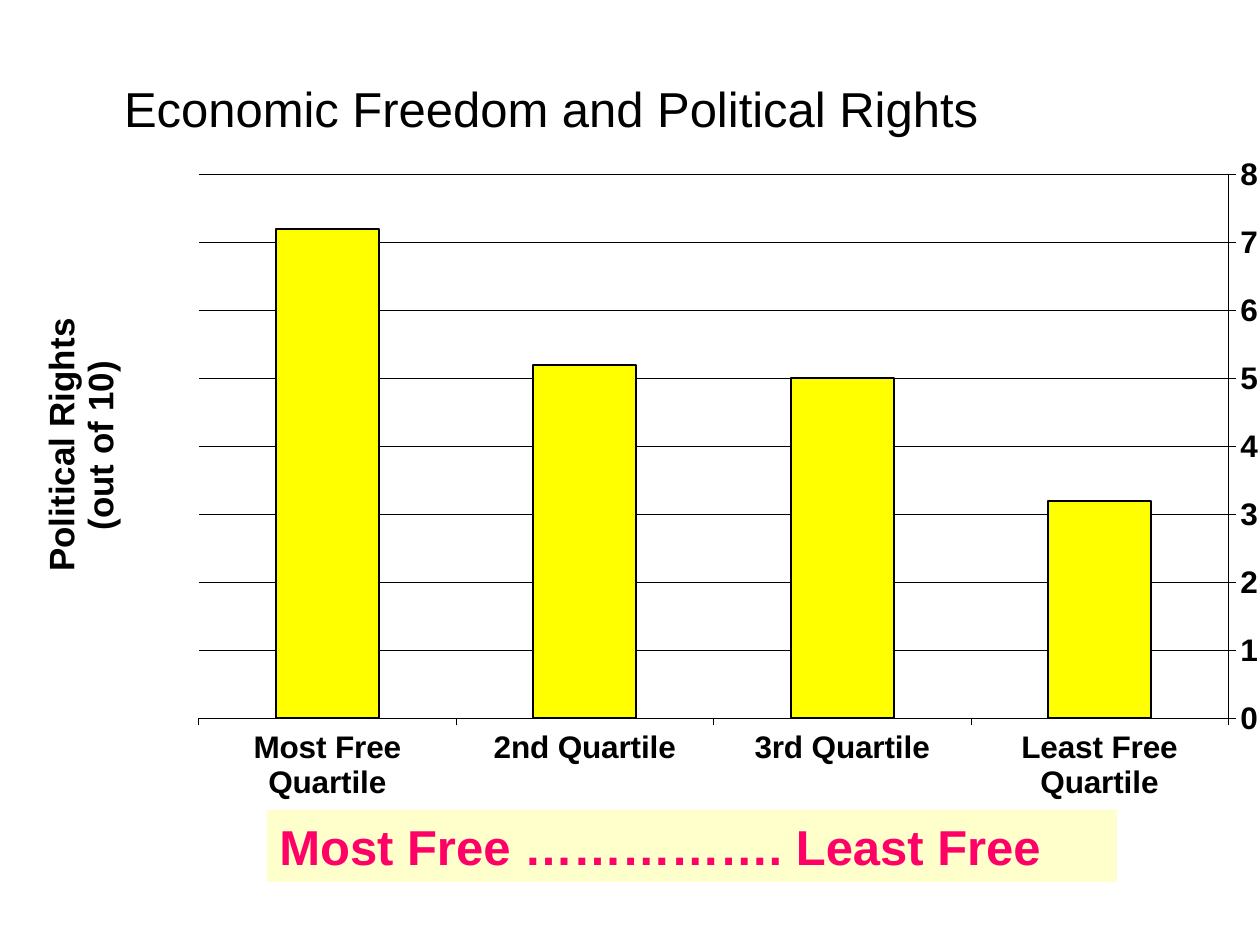
from lxml import etree
from pptx import Presentation
from pptx.chart.data import CategoryChartData
from pptx.dml.color import RGBColor
from pptx.enum.chart import XL_CHART_TYPE, XL_TICK_LABEL_POSITION, XL_TICK_MARK
from pptx.enum.shapes import MSO_SHAPE
from pptx.enum.text import MSO_ANCHOR, PP_ALIGN
from pptx.oxml.ns import qn
from pptx.util import Emu, Pt

COLUMN = XL_CHART_TYPE.COLUMN_CLUSTERED
LOW = XL_TICK_LABEL_POSITION.LOW
OUT, NONE = XL_TICK_MARK.OUTSIDE, XL_TICK_MARK.NONE
RECT = MSO_SHAPE.RECTANGLE
MIDDLE = MSO_ANCHOR.MIDDLE
LEFT, CENTER = PP_ALIGN.LEFT, PP_ALIGN.CENTER

TITLE = "Economic Freedom and Political Rights"
BAND = "Most Free ……………. Least Free"
AXIS = ["Political Rights", "(out of 10)"]
RIGHTS = [
    ("Least Free Quartile", 3.2),
    ("3rd Quartile", 5),
    ("2nd Quartile", 5.2),
    ("Most Free Quartile", 7.2),
]

THEME = {
    "font": "Arial",
    "ink": "000000", "bar": "FFFF00", "band": "FFFFCC", "pink": "FF0066",
    "head": 28, "label": 20.4, "tick": 18.2, "thin": 0.29, "edge": 1.14,
}
BOX = {
    "title": (0, 63, 1102, 136),
    "chart": (21, 157, 1237, 678),
    "band": (267, 810, 850, 72),
}
PLOT = {"x": 0.145, "y": 0.003, "w": 0.84, "h": 0.821}
NAME = {"x": 0.013, "y": 0.22}
PX = 914400 // 126


def px(n):
    return Emu(n * PX)


def place(key):
    return [px(n) for n in BOX[key]]


def color(key):
    return RGBColor.from_string(THEME[key])


def style(font, size, ink="ink", bold=True):
    look = {"name": THEME["font"], "size": Pt(THEME[size]), "bold": bold}
    for key, value in look.items():
        setattr(font, key, value)
    font.color.rgb = color(ink)


def stroke(line, width):
    line.color.rgb = color("ink")
    line.width = Pt(THEME[width])


def lay_out(node, spot, index, inner=False):
    for old in node.findall(qn("c:layout")):
        node.remove(old)
    layout = etree.Element(qn("c:layout"))
    manual = etree.SubElement(layout, qn("c:manualLayout"))
    parts = [("layoutTarget", "inner")] if inner else []
    parts += [("xMode", "edge"), ("yMode", "edge"), *spot.items()]
    for tag, value in parts:
        etree.SubElement(manual, qn("c:" + tag)).set("val", str(value))
    node.insert(index, layout)


def add_title(slide):
    title = slide.shapes.title
    title.left, title.top, title.width, title.height = place("title")
    frame = title.text_frame
    frame.text = TITLE
    frame.vertical_anchor = MIDDLE
    frame.margin_bottom = px(52)
    par = frame.paragraphs[0]
    par.alignment = CENTER
    style(par.runs[0].font, "head", bold=False)


def add_chart(slide):
    data = CategoryChartData(number_format="0.0")
    data.categories = [name for name, _ in RIGHTS]
    data.add_series("Series 1", [value for _, value in RIGHTS])
    chart = slide.shapes.add_chart(COLUMN, *place("chart"), data).chart
    chart.has_legend = chart.has_title = False
    style(chart.font, "label")

    plot = chart.plots[0]
    plot.gap_width, plot.vary_by_categories = 150, False
    bars = plot.series[0].format
    bars.fill.solid()
    bars.fill.fore_color.rgb = color("bar")
    stroke(bars.line, "edge")

    cat, val = chart.category_axis, chart.value_axis
    for axis in (cat, val):
        axis.major_tick_mark, axis.minor_tick_mark = OUT, NONE
        style(axis.tick_labels.font, "tick")
        stroke(axis.format.line, "thin")
    cat.reverse_order = True
    cat.tick_label_position = LOW
    scale = {"minimum_scale": 0, "maximum_scale": 8, "major_unit": 1,
             "has_major_gridlines": True}
    for key, value in scale.items():
        setattr(val, key, value)
    stroke(val.major_gridlines.format.line, "thin")
    val.tick_labels.number_format = "0"
    val.tick_labels.number_format_is_linked = False

    frame = val.axis_title.text_frame
    frame.text = "\n".join(AXIS)
    for par in frame.paragraphs:
        par.alignment = CENTER
        style(par.runs[0].font, "label")
    name = val.axis_title._element
    body = next(name.iter(qn("a:bodyPr")))
    body.set("rot", "-5400000")
    body.set("vert", "horz")
    lay_out(name, NAME, 1)
    lay_out(chart._chartSpace.chart.plotArea, PLOT, 0, True)


def add_band(slide):
    band = slide.shapes.add_shape(RECT, *place("band"))
    band.shadow.inherit = False
    band.fill.solid()
    band.fill.fore_color.rgb = color("band")
    band.line.fill.background()
    band.text_frame.text = BAND
    par = band.text_frame.paragraphs[0]
    par.alignment = LEFT
    style(par.runs[0].font, "head", "pink")


def main():
    deck = Presentation()
    deck.slide_width, deck.slide_height = px(1260), px(945)
    slide = deck.slides.add_slide(deck.slide_layouts[5])
    add_title(slide)
    add_chart(slide)
    add_band(slide)
    deck.save("out.pptx")


if __name__ == "__main__":
    main()
